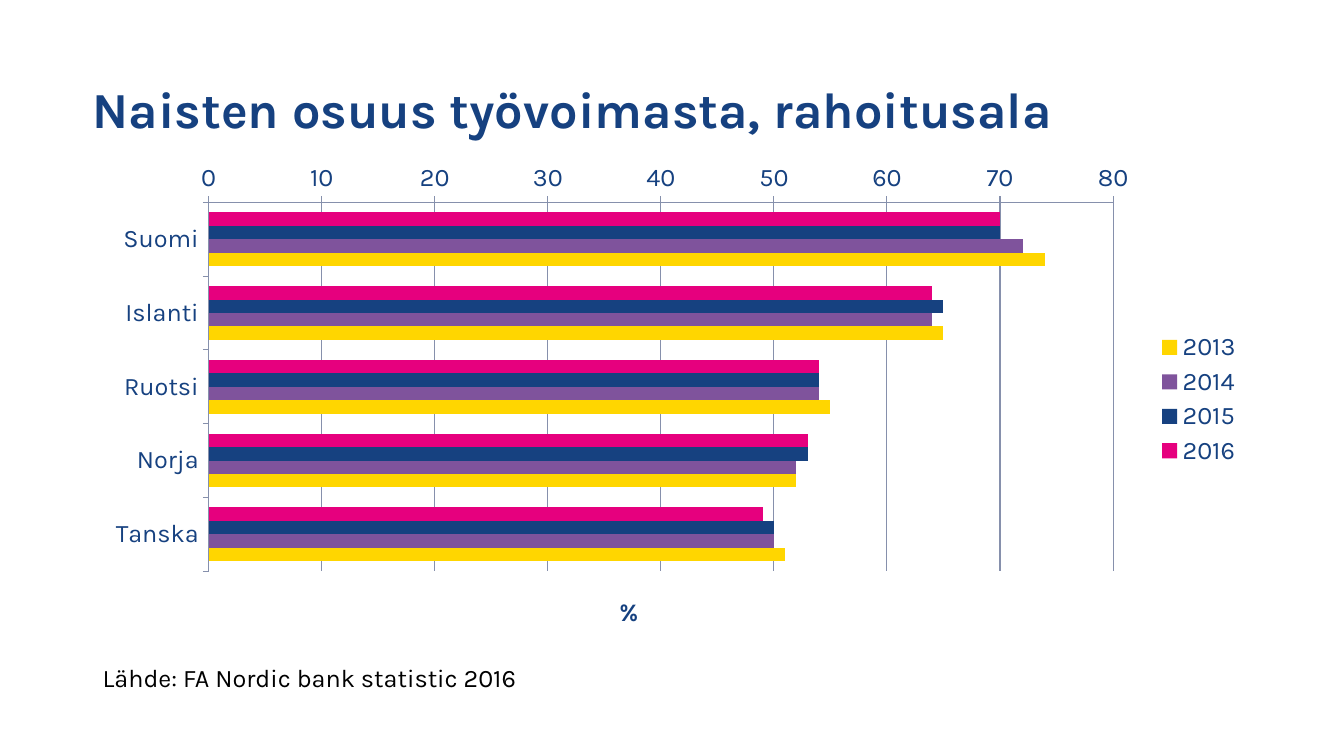
import pptx
import pptx.util
import pptx.chart.data
import pptx.dml.color
import pptx.enum.chart
import pptx.enum.text
import pptx.oxml

Inches = pptx.util.Inches
Pt = pptx.util.Pt
RGBColor = pptx.dml.color.RGBColor
Anchor = pptx.enum.text.MSO_ANCHOR
Fit = pptx.enum.text.MSO_AUTO_SIZE
Kind = pptx.enum.chart

NAVY = RGBColor(0x16, 0x41, 0x80)
PINK = RGBColor(0xE6, 0x00, 0x7E)
PLUM = RGBColor(0x7F, 0x53, 0x9C)
GOLD = RGBColor(0xFF, 0xD6, 0x00)
GREY = RGBColor(0x86, 0x90, 0xAC)
BLACK = RGBColor(0, 0, 0)

LANDS = ["Suomi", "Islanti", "Ruotsi", "Norja", "Tanska"]
YEARS = [
    ("2016", PINK, (70, 64, 54, 53, 49)),
    ("2015", NAVY, (70, 65, 54, 53, 50)),
    ("2014", PLUM, (72, 64, 54, 52, 50)),
    ("2013", GOLD, (74, 65, 55, 52, 51)),
]


class Deck:
    face = "Karla"

    def __init__(self):
        self.show = pptx.Presentation()
        self.show.slide_width = Inches(13.33)
        self.show.slide_height = Inches(7.5)
        self.slide = self.show.slides.add_slide(self.show.slide_layouts[6])

    def style(self, font, size, color, bold=False):
        font.name = self.face
        font.size = Pt(size)
        font.bold = bold
        font.color.rgb = color

    def text(self, words, area, size, color, bold=False):
        box = self.slide.shapes.add_textbox(*map(Inches, area))
        frame = box.text_frame
        frame.word_wrap = True
        frame.text = words
        para = frame.paragraphs[0]
        self.style(para.runs[0].font, size, color, bold)
        return frame, para

    def place(self, **sides):
        space = pptx.oxml.ns.nsdecls("c")
        marks = "".join(f'<c:{side} val="{mark}"/>' for side, mark in sides.items())
        return pptx.oxml.parse_xml(
            f"<c:layout {space}><c:manualLayout>{marks}</c:manualLayout></c:layout>")

    def line(self, form):
        form.line.color.rgb = GREY
        form.line.width = Pt(0.75)

    def bars(self, area):
        data = pptx.chart.data.CategoryChartData()
        data.categories = LANDS
        for year, _, shares in YEARS:
            data.add_series(year, shares)
        chart = self.slide.shapes.add_chart(
            Kind.XL_CHART_TYPE.BAR_CLUSTERED, *map(Inches, area), data).chart
        self.style(chart.font, 18, NAVY)
        chart.has_title = False
        chart.has_legend = True
        chart.legend.position = Kind.XL_LEGEND_POSITION.RIGHT
        chart.legend.include_in_layout = False

        plot = chart.plots[0]
        plot.gap_width = 150
        plot.overlap = 0
        plot.vary_by_categories = False
        for series, (_, color, _) in zip(plot.series, YEARS):
            series.format.fill.solid()
            series.format.fill.fore_color.rgb = color

        lands, scale = chart.category_axis, chart.value_axis
        for axis in (lands, scale):
            axis.major_tick_mark = Kind.XL_TICK_MARK.OUTSIDE
            axis.minor_tick_mark = Kind.XL_TICK_MARK.NONE
            self.line(axis.format)
        lands.reverse_order = True
        scale.minimum_scale, scale.maximum_scale = 0, 80
        scale.major_unit = 10
        scale.has_major_gridlines = True
        self.line(scale.major_gridlines.format)

        title = scale.axis_title
        title.text_frame.text = "%"
        self.style(title.text_frame.paragraphs[0].runs[0].font, 18, NAVY, True)
        spot = self.place(xMode="edge", yMode="edge", x=0.45, y=0.89)
        frame = self.place(layoutTarget="inner", xMode="edge", yMode="edge",
                           x=0.1, y=0.1, w=0.78, h=0.75)
        root = title._element
        field = chart._chartSpace.xpath("c:chart/c:plotArea")[0]
        for part in (root, field):
            for old in part.xpath("c:layout"):
                part.remove(old)
        root.xpath("c:tx")[0].addnext(spot)
        field.insert(0, frame)


def main():
    deck = Deck()
    frame, para = deck.text("Naisten osuus työvoimasta, rahoitusala",
                            (0.82, 0.39, 11.5, 1.45), 36, NAVY, True)
    frame.vertical_anchor = Anchor.MIDDLE
    para.line_spacing = 0.9
    deck.bars((0.92, 1.52, 11.5, 4.88))
    frame, _ = deck.text("Lähde: FA Nordic bank statistic 2016",
                         (0.92, 6.52, 7.91, 0.4), 18, BLACK)
    frame.auto_size = Fit.SHAPE_TO_FIT_TEXT
    deck.show.save("out.pptx")


if __name__ == "__main__":
    main()
